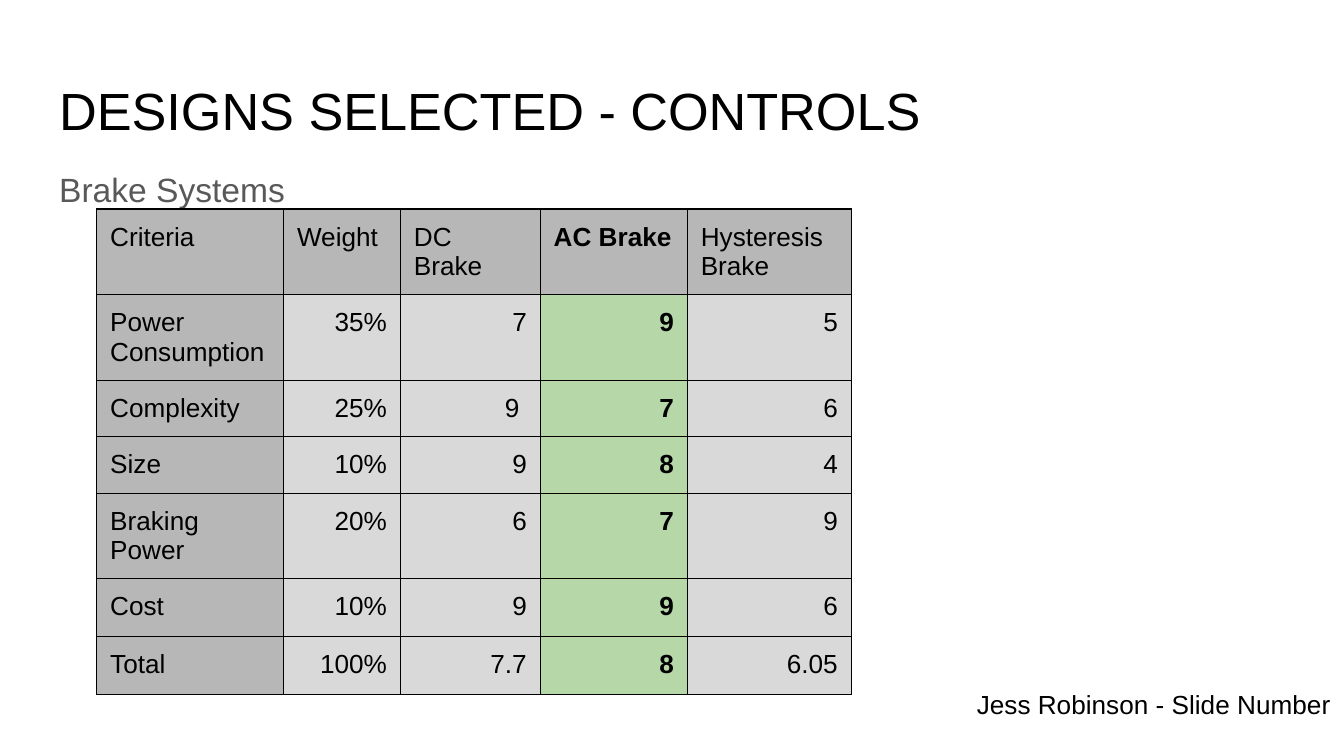
from lxml.etree import SubElement
from pptx import Presentation
from pptx.dml.color import RGBColor
from pptx.enum.text import MSO_ANCHOR, MSO_AUTO_SIZE, PP_ALIGN
from pptx.oxml.ns import qn
from pptx.util import Pt

PX = 4572  # EMU per px, 200 px to the inch
INSET = 20
COLORS = {
    "text": "000000",
    "subtitle": "595959",
    "border": "000000",
    "header": "B7B7B7",
    "score": "D9D9D9",
    "selected": "B6D7A8",
}
SELECTED_COLUMN = 3
COLUMN_WIDTHS = [278, 174, 208, 219, 244]
ROW_HEIGHTS = [86, 84, 84, 84, 84, 86, 86]
BRAKE_SCORES = [
    ["Criteria", "Weight", "DC Brake", "AC Brake", "Hysteresis Brake"],
    ["Power Consumption", "35%", "7", "9", "5"],
    ["Complexity", "25%", "9 ", "7", "6"],
    ["Size", "10%", "9", "8", "4"],
    ["Braking Power", "20%", "6", "7", "9"],
    ["Cost", "10%", "9", "9", "6"],
    ["Total", "100%", "7.7", "8", "6.05"],
]


def color(name):
    return RGBColor.from_string(COLORS[name])


class SlideBuilder:
    """Holds the style and the current slide."""

    font_name = "Arial"
    border_width = Pt(0.75)

    def __init__(self, slide):
        self.slide = slide

    def style_paragraph(self, paragraph, size, color_name="text", align=PP_ALIGN.LEFT, bold=False):
        paragraph.alignment = align
        font = paragraph.font
        font.name, font.size, font.bold = self.font_name, Pt(size), bold
        font.color.rgb = color(color_name)

    def fill_text(self, shape, box, text, size, **style):
        """Places a text shape and gives it one styled paragraph."""
        shape.left, shape.top, shape.width, shape.height = (length * PX for length in box)
        frame = shape.text_frame
        frame.text = text
        frame.word_wrap = True
        frame.auto_size = MSO_AUTO_SIZE.NONE
        frame.vertical_anchor = MSO_ANCHOR.TOP
        frame.margin_left = frame.margin_right = INSET * PX
        frame.margin_top = frame.margin_bottom = INSET * PX
        paragraph = frame.paragraphs[0]
        self.style_paragraph(paragraph, size, **style)
        return paragraph

    def title(self, box, text):
        self.fill_text(self.slide.shapes.title, box, text, 28)

    def body(self, box, text):
        paragraph = self.fill_text(self.slide.placeholders[1], box, text, 18, color_name="subtitle")
        paragraph.line_spacing = 1.15
        paragraph.space_before = Pt(0)
        paragraph.space_after = Pt(16)
        properties = paragraph._p.get_or_add_pPr()
        properties.set("marL", "0")
        properties.set("indent", "0")
        SubElement(properties, qn("a:buNone"))
        properties.append(properties.find(qn("a:defRPr")))

    def text_box(self, box, text, align):
        shape = self.slide.shapes.add_textbox(0, 0, PX, PX)
        self.fill_text(shape, box, text, 14, align=align)

    def cell_borders(self, cell):
        properties = cell._tc.get_or_add_tcPr()
        for index, side in enumerate(("lnL", "lnR", "lnT", "lnB")):
            line = SubElement(properties, qn(f"a:{side}"), w=str(int(self.border_width)))
            fill = SubElement(line, qn("a:solidFill"))
            SubElement(fill, qn("a:srgbClr"), val=COLORS["border"])
            properties.insert(index, line)

    def cell(self, cell, text, fill_name, align, bold):
        cell.text = text
        cell.margin_left = cell.margin_right = INSET * PX
        cell.margin_top = cell.margin_bottom = INSET * PX
        self.style_paragraph(cell.text_frame.paragraphs[0], 14, align=align, bold=bold)
        cell.fill.solid()
        cell.fill.fore_color.rgb = color(fill_name)
        self.cell_borders(cell)

    def score_table(self, left, top, rows, widths, heights):
        """Draws scores with a header row, a header column and one selected column."""
        table = self.slide.shapes.add_table(
            len(rows), len(widths), left * PX, top * PX, sum(widths) * PX, sum(heights) * PX
        ).table
        table.first_row = table.horz_banding = False
        for column, width in zip(table.columns, widths):
            column.width = width * PX
        for row_index, (values, height) in enumerate(zip(rows, heights)):
            table.rows[row_index].height = height * PX
            for column_index, value in enumerate(values):
                is_header = row_index == 0 or column_index == 0
                is_selected = column_index == SELECTED_COLUMN
                fill_name = "header" if is_header else "selected" if is_selected else "score"
                align = PP_ALIGN.LEFT if is_header else PP_ALIGN.RIGHT
                self.cell(table.cell(row_index, column_index), value, fill_name, align, is_selected)


def main():
    presentation = Presentation()
    presentation.slide_width = 2000 * PX
    presentation.slide_height = 1125 * PX
    builder = SlideBuilder(presentation.slides.add_slide(presentation.slide_layouts[1]))
    builder.title((68, 97, 1864, 125), "DESIGNS SELECTED - CONTROLS")
    builder.body((68, 222, 1864, 747), "Brake Systems")
    builder.text_box((960, 1004, 1040, 121), "Jess Robinson - Slide Number", PP_ALIGN.RIGHT)
    builder.score_table(144, 311, BRAKE_SCORES, COLUMN_WIDTHS, ROW_HEIGHTS)
    presentation.save("out.pptx")


if __name__ == "__main__":
    main()
